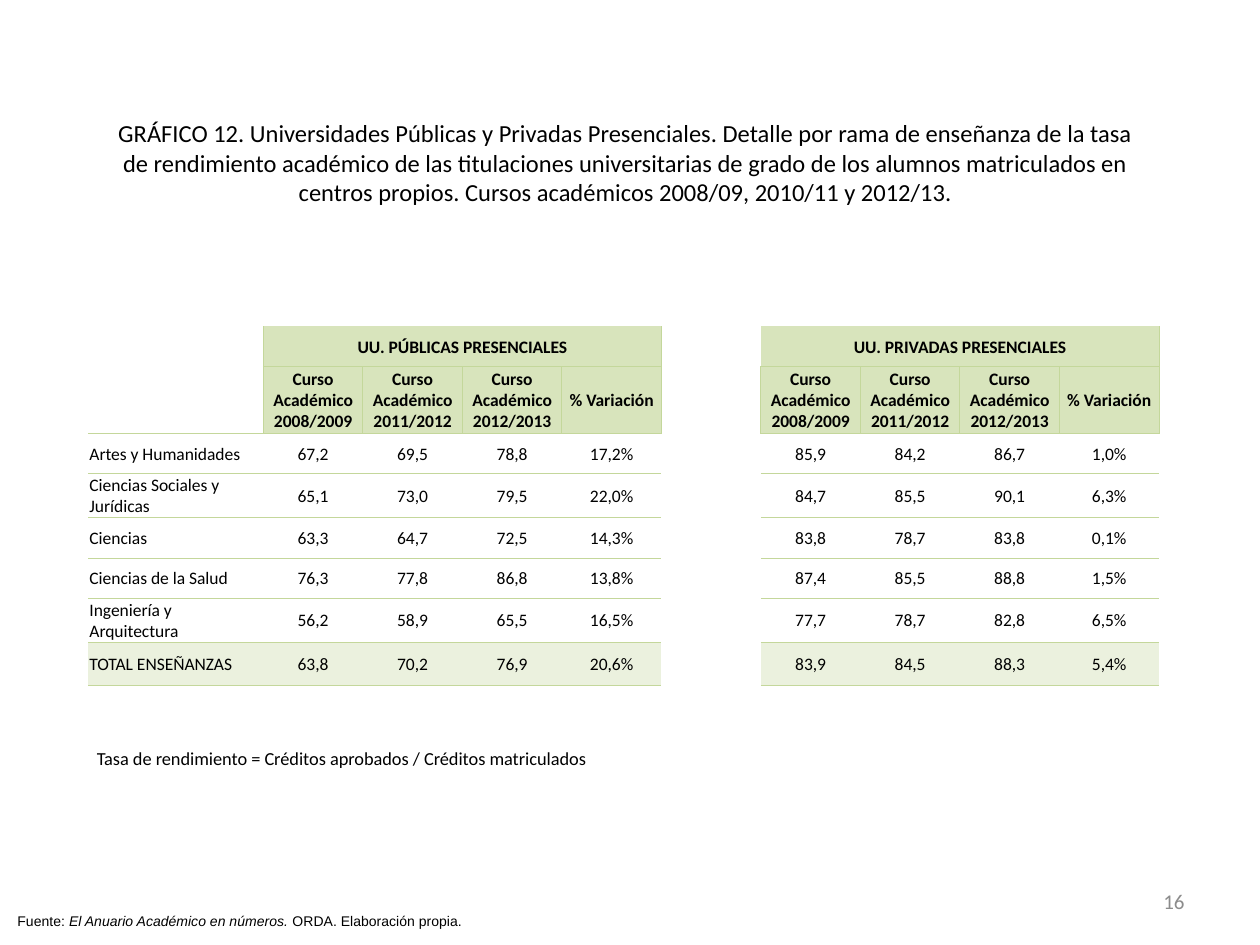
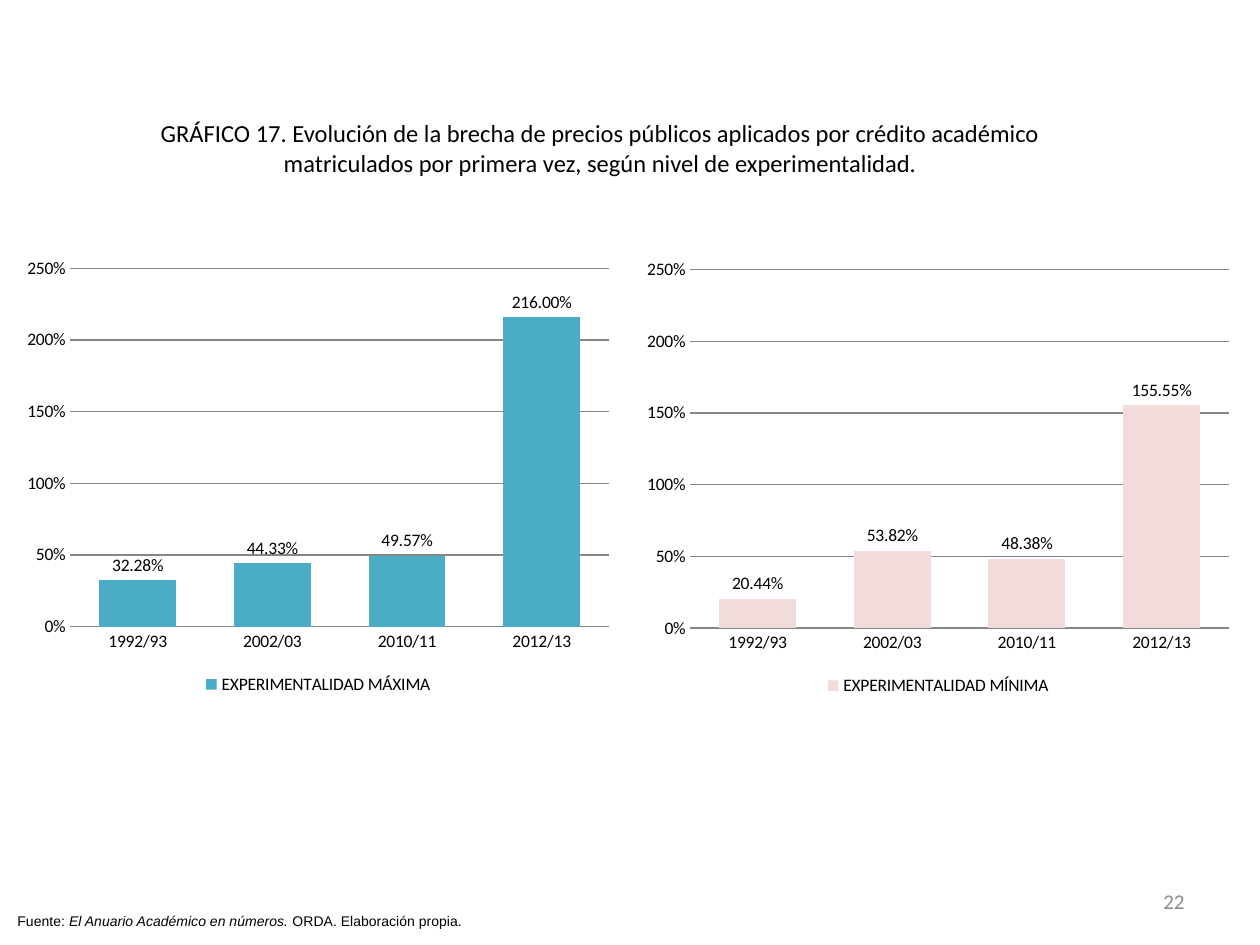
"""Build two slides on university performance rates and public price gaps."""
from lxml.etree import SubElement
from pptx import Presentation
from pptx.chart.data import CategoryChartData
from pptx.dml.color import RGBColor
from pptx.enum.chart import XL_CHART_TYPE, XL_LABEL_POSITION, XL_LEGEND_POSITION, XL_TICK_MARK
from pptx.enum.text import MSO_ANCHOR, MSO_AUTO_SIZE, PP_ALIGN
from pptx.oxml.ns import qn
from pptx.util import Inches, Pt

BLACK = RGBColor(0x00, 0x00, 0x00)
GRAY = RGBColor(0x8C, 0x8C, 0x8C)
RULE = RGBColor(0x86, 0x86, 0x86)
GREEN = RGBColor(0xC4, 0xD7, 0x9B)
HEAD = RGBColor(0xD8, 0xE4, 0xBC)
TOTAL = RGBColor(0xEB, 0xF1, 0xDE)
TEAL = RGBColor(0x4B, 0xAC, 0xC6)
PINK = RGBColor(0xF2, 0xDC, 0xDB)
PLAIN = "{2D5ABB26-0587-4C30-8999-92F81FD0307C}"

RATES = {
    "title": "GRÁFICO 12. Universidades Públicas y Privadas Presenciales. Detalle por rama de "
             "enseñanza de la tasa de rendimiento académico de las titulaciones universitarias "
             "de grado de los alumnos matriculados en centros propios. Cursos académicos "
             "2008/09, 2010/11 y 2012/13.",
    "box": (0.83, 0.89, 8.27, 0.81),
    "page": "16",
}
PRICES = {
    "title": "GRÁFICO 17. Evolución de la brecha de precios públicos aplicados por crédito "
             "académico matriculados por primera vez, según nivel de experimentalidad.",
    "box": (0.67, 0.89, 8.19, 0.57),
    "page": "22",
}
SOURCE = [("Fuente: ", False), ("El Anuario Académico en números.", True),
          (" ORDA. Elaboración propia.", False)]
NOTE = "Tasa de rendimiento = Créditos aprobados / Créditos matriculados"

GROUPS = {1: "UU. PÚBLICAS PRESENCIALES", 6: "UU. PRIVADAS PRESENCIALES"}
HEADS = ["Curso Académico 2008/2009", "Curso Académico 2011/2012",
         "Curso Académico 2012/2013", "% Variación"]
BODY = [
    ("Artes y Humanidades", "67,2 69,5 78,8 17,2%", "85,9 84,2 86,7 1,0%"),
    ("Ciencias Sociales y Jurídicas", "65,1 73,0 79,5 22,0%", "84,7 85,5 90,1 6,3%"),
    ("Ciencias", "63,3 64,7 72,5 14,3%", "83,8 78,7 83,8 0,1%"),
    ("Ciencias de la Salud", "76,3 77,8 86,8 13,8%", "87,4 85,5 88,8 1,5%"),
    ("Ingeniería y Arquitectura", "56,2 58,9 65,5 16,5%", "77,7 78,7 82,8 6,5%"),
    ("TOTAL ENSEÑANZAS", "63,8 70,2 76,9 20,6%", "83,9 84,5 88,3 5,4%"),
]
TALL = [0.2, 0.21, 0.32, 0.53, 0.32, 0.35, 0.32, 0.32, 0.35, 0.34, 0.21, 0.21]
WIDE = [1.39] + [0.79] * 9
TOP, GAP = 2, 5
FIRST = TOP + 2
LAST = FIRST + len(BODY) - 1

YEARS = ["1992/93", "2002/03", "2010/11", "2012/13"]
CHARTS = [
    ("EXPERIMENTALIDAD MÁXIMA", [0.3228, 0.4433, 0.4957, 2.16], TEAL, 0.12, 1.98),
    ("EXPERIMENTALIDAD MÍNIMA", [0.2044, 0.5382, 0.4838, 1.5555], PINK, 5.04, 1.99),
]


def inch(box):
    return [Inches(n) for n in box]


def write(frame, text, size=10, font="Calibri", color=BLACK, bold=False,
          align=PP_ALIGN.LEFT, anchor=MSO_ANCHOR.TOP):
    frame.vertical_anchor = anchor
    par = frame.paragraphs[0]
    par.alignment = align
    for words, slant in [(text, False)] if isinstance(text, str) else text:
        run = par.add_run()
        run.text = words
        face = run.font
        face.name, face.size = font, Pt(size)
        face.bold, face.italic = bold, slant
        face.color.rgb = color


def label(slide, box, text, **style):
    frame = slide.shapes.add_textbox(*inch(box)).text_frame
    frame.word_wrap = True
    write(frame, text, **style)


def start(deck, part):
    slide = deck.slides.add_slide(deck.slide_layouts[5])
    title = slide.shapes.title
    title.left, title.top, title.width, title.height = inch(part["box"])
    title.text_frame.auto_size = MSO_AUTO_SIZE.NONE
    write(title.text_frame, part["title"], size=14, align=PP_ALIGN.CENTER)
    label(slide, (0.04, 7.19, 7.8, 0.24), SOURCE, size=8, font="Arial")
    label(slide, (7.17, 6.95, 2.33, 0.4), part["page"], size=12, color=GRAY,
          align=PP_ALIGN.RIGHT, anchor=MSO_ANCHOR.MIDDLE)
    return slide


def edge(cell, sides):
    props = cell._tc.get_or_add_tcPr()
    for side in sides:
        line = SubElement(props, qn(f"a:ln{side}"), w=str(Pt(0.5)))
        fill = SubElement(line, qn("a:solidFill"))
        SubElement(fill, qn("a:srgbClr"), val=str(GREEN))


def sides(row, col):
    if col == GAP or not TOP <= row <= LAST:
        return ""
    if row >= FIRST:
        return "TB"
    if col == 0:
        return "RB"
    if row == TOP:
        return {1: "LRB", 6: "RB"}.get(col, "")
    return "LRTB"


def shade(row, col):
    if col != GAP and row == LAST:
        return TOTAL
    if col not in (0, GAP) and TOP <= row < FIRST:
        return HEAD
    return None


def words():
    rows = [[""] * len(WIDE) for _ in TALL]
    for col, name in GROUPS.items():
        rows[TOP][col] = name
    rows[TOP + 1] = ["", *HEADS, "", *HEADS]
    for row, (name, public, private) in enumerate(BODY, FIRST):
        rows[row] = [name, *public.split(), "", *private.split()]
    return rows


def grid(slide):
    box = (0.7, 2.18, sum(WIDE), sum(TALL))
    table = slide.shapes.add_table(len(TALL), len(WIDE), *inch(box)).table
    table.first_row = table.horz_banding = False
    table._tbl.tblPr.find(qn("a:tableStyleId")).text = PLAIN
    for col, size in zip(table.columns, WIDE):
        col.width = Inches(size)
    for row, size in zip(table.rows, TALL):
        row.height = Inches(size)
    for row, line in enumerate(words()):
        for col, text in enumerate(line):
            cell = table.cell(row, col)
            cell.margin_left = cell.margin_right = cell.margin_top = Inches(0.01)
            cell.margin_bottom = 0
            cell.vertical_anchor = MSO_ANCHOR.MIDDLE
            edge(cell, sides(row, col))
            tint = shade(row, col)
            if tint:
                cell.fill.solid()
                cell.fill.fore_color.rgb = tint
            else:
                cell.fill.background()
            if text:
                write(cell.text_frame, text, bold=row < FIRST, anchor=MSO_ANCHOR.MIDDLE,
                      align=PP_ALIGN.CENTER if col else PP_ALIGN.LEFT)
            else:
                cell.text_frame.paragraphs[0].font.size = Pt(10)
    for first, last in [((0, 0), (0, 9)), ((TOP, 0), (TOP + 1, 0)),
                        ((LAST + 2, 0), (LAST + 2, 4))]:
        table.cell(*first).merge(table.cell(*last))
    for col in GROUPS:
        table.cell(TOP, col).merge(table.cell(TOP, col + 3))


def rule(line):
    line.color.rgb = RULE
    line.width = Pt(0.75)


def bars(slide, name, vals, color, left, top):
    data = CategoryChartData(number_format="0.00%")
    data.categories = YEARS
    data.add_series(name, vals)
    chart = slide.shapes.add_chart(XL_CHART_TYPE.COLUMN_CLUSTERED,
                                   *inch((left, top, 4.81, 3.57)), data).chart
    chart.has_title = False
    chart.font.name, chart.font.size = "Calibri", Pt(10)
    chart.font.color.rgb = BLACK
    chart.has_legend = True
    chart.legend.position = XL_LEGEND_POSITION.BOTTOM
    chart.legend.include_in_layout = False
    cats, scale = chart.category_axis, chart.value_axis
    for axis in (cats, scale):
        axis.major_tick_mark = axis.minor_tick_mark = XL_TICK_MARK.NONE
    rule(cats.format.line)
    scale.minimum_scale, scale.maximum_scale, scale.major_unit = 0, 2.5, 0.5
    scale.format.line.fill.background()
    rule(scale.major_gridlines.format.line)
    scale.tick_labels.number_format = "0%"
    scale.tick_labels.number_format_is_linked = False
    plot = chart.plots[0]
    plot.gap_width, plot.overlap = 75, -25
    plot.vary_by_categories = False
    fill = plot.series[0].format.fill
    fill.solid()
    fill.fore_color.rgb = color
    tags = plot.series[0].data_labels
    tags.show_value = True
    tags.number_format, tags.number_format_is_linked = "0.00%", False
    tags.position = XL_LABEL_POSITION.OUTSIDE_END


def main():
    deck = Presentation()
    deck.slide_width, deck.slide_height = Inches(10), Inches(7.5)
    slide = start(deck, RATES)
    grid(slide)
    label(slide, (0.67, 5.88, 8.27, 0.29), NOTE, size=10.5)
    slide = start(deck, PRICES)
    for chart in CHARTS:
        bars(slide, *chart)
    deck.save("out.pptx")


if __name__ == "__main__":
    main()
